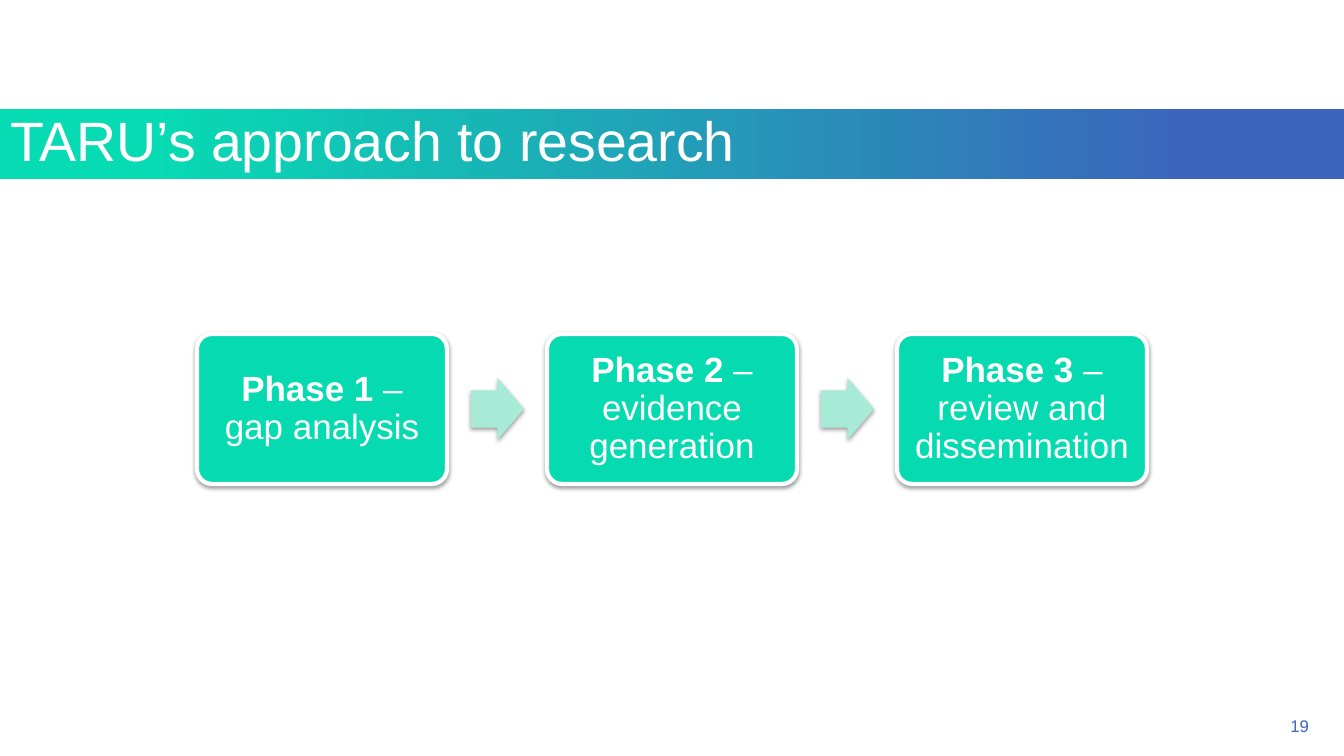
from lxml.etree import SubElement
from pptx import Presentation
from pptx.dml.color import RGBColor
from pptx.enum.shapes import MSO_SHAPE
from pptx.enum.text import MSO_ANCHOR, MSO_AUTO_SIZE, PP_ALIGN
from pptx.oxml.ns import qn
from pptx.util import Emu, Pt

EMU_PER_PX = 914400 / 100.8
SLIDE_WIDTH, SLIDE_HEIGHT = 1344, 756
WHITE, BLUE, GREEN = "FFFFFF", "3B66BC", "07DBB3"
PHASE_FILL, ARROW_FILL = "05DAB0", "A7EAD5"
PHASES = [
    ("Phase 1", " – gap analysis"),
    ("Phase 2", " – evidence generation"),
    ("Phase 3", " – review and dissemination"),
]


def px(length):
    return Emu(round(length * EMU_PER_PX))


def color(hex_string):
    return RGBColor.from_string(hex_string)


def add_run(paragraph, text, size, hex_string, bold=False):
    run = paragraph.add_run()
    run.text = text
    run.font.name = "Arial"
    run.font.size = Pt(size)
    run.font.bold = bold
    run.font.color.rgb = color(hex_string)


def set_frame(text_frame, anchor, horizontal, vertical):
    """Wrap and anchor the text, with insets in px."""
    text_frame.word_wrap = True
    text_frame.auto_size = MSO_AUTO_SIZE.NONE
    text_frame.vertical_anchor = anchor
    text_frame.margin_left = text_frame.margin_right = px(horizontal)
    text_frame.margin_top = text_frame.margin_bottom = px(vertical)


def add_soft_shadow(shape):
    """Give the shape a faint shadow that falls straight down."""
    shape.shadow.inherit = False
    effects = shape._element.spPr.find(qn("a:effectLst"))
    shadow = SubElement(effects, qn("a:outerShdw"), blurRad="40000",
                        dist="20000", dir="5400000", rotWithShape="0")
    black = SubElement(shadow, qn("a:srgbClr"), val="000000")
    SubElement(black, qn("a:alpha"), val="38000")


def add_title_band(slide, left, top, width, height):
    title = slide.shapes.title
    title.left, title.top = px(left), px(top)
    title.width, title.height = px(width), px(height)
    title.fill.gradient()
    title.fill.gradient_angle = 0
    stops = [(0.11, GREEN), (0.88, BLUE)]
    for stop, (position, hex_string) in zip(title.fill.gradient_stops, stops):
        stop.position = position
        stop.color.rgb = color(hex_string)
    set_frame(title.text_frame, MSO_ANCHOR.MIDDLE, 10, 5)
    paragraph = title.text_frame.paragraphs[0]
    paragraph.alignment = PP_ALIGN.LEFT
    paragraph.line_spacing = 0.9
    add_run(paragraph, "TARU’s approach to research", 39.6, WHITE)


def add_phase(slide, left, top, width, height, name, description):
    box = slide.shapes.add_shape(MSO_SHAPE.ROUNDED_RECTANGLE,
                                 px(left), px(top), px(width), px(height))
    box.adjustments[0] = 0.1
    box.fill.solid()
    box.fill.fore_color.rgb = color(PHASE_FILL)
    box.line.color.rgb = color(WHITE)
    box.line.width = Pt(3)
    add_soft_shadow(box)
    set_frame(box.text_frame, MSO_ANCHOR.MIDDLE, 10, 10)
    paragraph = box.text_frame.paragraphs[0]
    paragraph.alignment = PP_ALIGN.CENTER
    paragraph.line_spacing = 0.9
    add_run(paragraph, name, 25, WHITE, bold=True)
    add_run(paragraph, description, 25, WHITE)


def add_phase_arrow(slide, left, top, width, height):
    arrow = slide.shapes.add_shape(MSO_SHAPE.RIGHT_ARROW,
                                   px(left), px(top), px(width), px(height))
    arrow.adjustments[0] = 0.6
    arrow.adjustments[1] = 0.5
    arrow.fill.solid()
    arrow.fill.fore_color.rgb = color(ARROW_FILL)
    arrow.line.fill.background()
    add_soft_shadow(arrow)


def add_process(slide, left, top, width, height):
    """Spread the phases over the box, with an arrow in each gap."""
    phase_width, arrow_width, arrow_height, arrow_gap = 250, 53, 62, 24
    pitch = (width - phase_width) // (len(PHASES) - 1)
    for index, (name, description) in enumerate(PHASES):
        phase_left = left + index * pitch
        if index:
            add_phase_arrow(slide, phase_left - pitch + phase_width + arrow_gap,
                            top + (height - arrow_height) // 2,
                            arrow_width, arrow_height)
        add_phase(slide, phase_left, top, phase_width, height, name, description)


def add_page_number(slide, left, top, width, height):
    box = slide.shapes.add_textbox(px(left), px(top), px(width), px(height))
    set_frame(box.text_frame, MSO_ANCHOR.BOTTOM, 10, 5)
    paragraph = box.text_frame.paragraphs[0]
    paragraph.alignment = PP_ALIGN.RIGHT
    add_run(paragraph, "19", 12, BLUE)


def main():
    presentation = Presentation()
    presentation.slide_width = px(SLIDE_WIDTH)
    presentation.slide_height = px(SLIDE_HEIGHT)
    slide = presentation.slides.add_slide(presentation.slide_layouts[5])
    add_title_band(slide, 0, 109, SLIDE_WIDTH, 70)
    add_process(slide, 197, 334, 950, 150)
    add_page_number(slide, 1017, 716, 302, 25)
    presentation.save("out.pptx")


if __name__ == "__main__":
    main()
